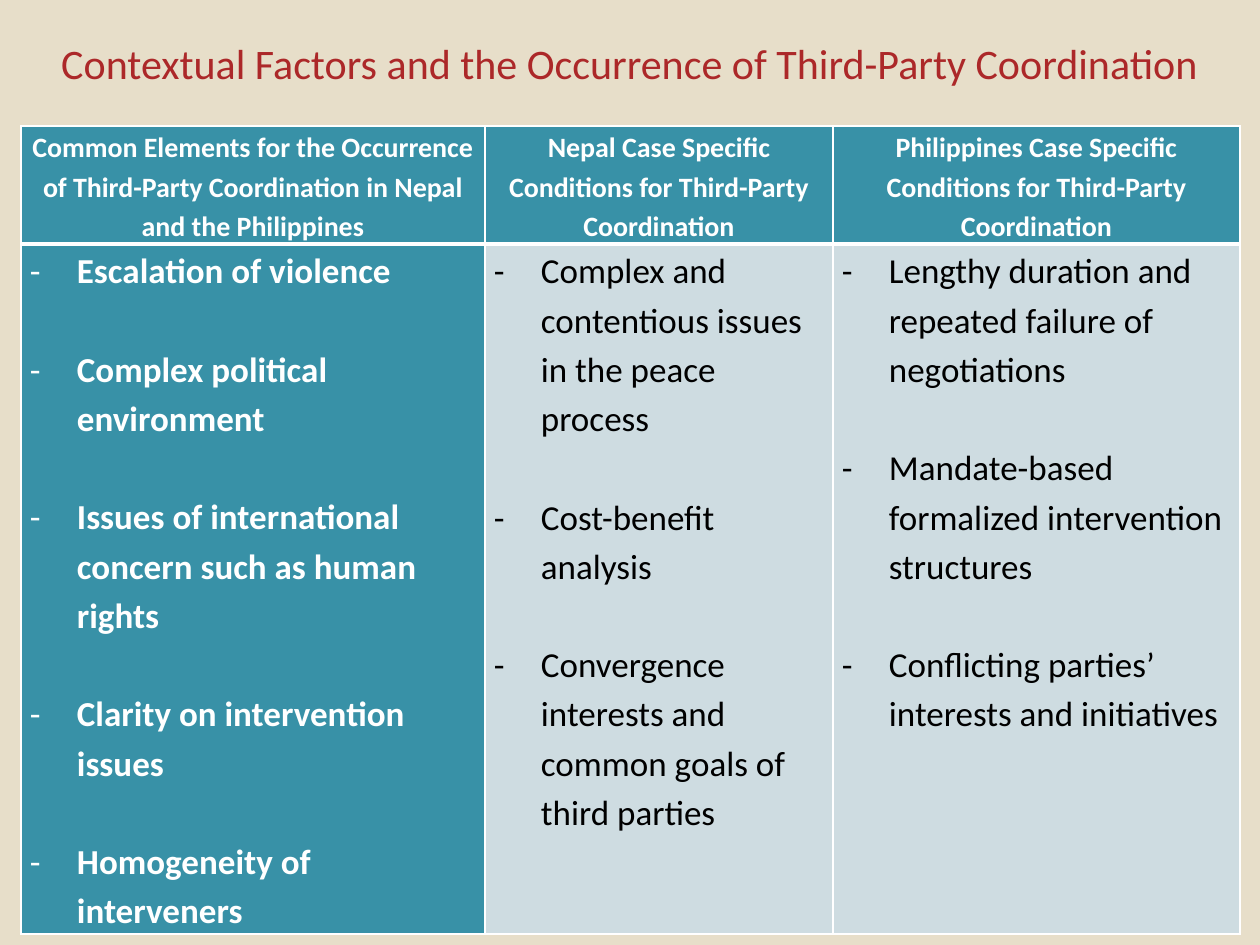
"""Build a slide comparing contextual factors of third-party coordination."""
from lxml.etree import SubElement
from pptx import Presentation
from pptx.dml.color import RGBColor
from pptx.enum.text import MSO_ANCHOR, MSO_AUTO_SIZE, PP_ALIGN
from pptx.oxml import parse_xml
from pptx.oxml.ns import nsdecls, qn
from pptx.util import Emu, Pt

TITLE = "Contextual Factors and the Occurrence of Third-Party Coordination"
COLUMNS = [
    {
        "heading": "Common Elements for the Occurrence of Third-Party Coordination in Nepal and the Philippines",
        "factors": [
            "Escalation of violence",
            "Complex political environment",
            "Issues of international concern such as human rights",
            "Clarity on intervention issues",
            "Homogeneity of interveners",
        ],
        "width": 464, "fill": "3891A7", "color": "FFFFFF", "bold": True,
    },
    {
        "heading": "Nepal Case Specific Conditions for Third-Party Coordination",
        "factors": [
            "Complex and contentious issues in the peace process",
            "Cost-benefit analysis",
            "Convergence interests and common goals of third parties",
        ],
        "width": 348, "fill": "CEDCE1", "color": "000000", "bold": False,
    },
    {
        "heading": "Philippines Case Specific Conditions for Third-Party Coordination",
        "factors": [
            "Lengthy duration and repeated failure of negotiations",
            "Mandate-based formalized intervention structures",
            "Conflicting parties’ interests and initiatives",
        ],
        "width": 407, "fill": "CEDCE1", "color": "000000", "bold": False,
    },
]
HEADING_FILL, WHITE = "3891A7", "FFFFFF"
ROW_HEIGHTS = [118, 690]
FACTOR_GAP = Pt(28.1)
INDENT = 47


def px(length):
    return Emu(round(length * 914400 / 126))


def rgb(color):
    return RGBColor.from_string(color)


def add_text(paragraph, text, size, color, bold=False):
    run = paragraph.add_run()
    run.text = text
    run.font.name = "Calibri"
    run.font.size = Pt(size)
    run.font.bold = bold
    run.font.color.rgb = rgb(color)


def add_dash(paragraph):
    properties = paragraph._p.get_or_add_pPr()
    properties.set("marL", str(px(INDENT)))
    properties.set("indent", str(-px(INDENT)))
    SubElement(properties, qn("a:buFont"), typeface="Calibri")
    SubElement(properties, qn("a:buChar"), char="-")


def format_cell(cell, fill, bottom_width):
    cell.fill.solid()
    cell.fill.fore_color.rgb = rgb(fill)
    cell.margin_left = cell.margin_right = px(9)
    cell.margin_top = cell.margin_bottom = 0
    for position, side in enumerate("LRTB"):
        width = Pt(bottom_width if side == "B" else 1)
        cell._tc.get_or_add_tcPr().insert(position, parse_xml(
            f'<a:ln{side} {nsdecls("a")} w="{width}"><a:solidFill>'
            f'<a:srgbClr val="{WHITE}"/></a:solidFill></a:ln{side}>'))


def add_title(slide):
    title = slide.shapes.title
    title.left, title.top, title.width, title.height = map(px, (10, 21, 1239, 73))
    frame = title.text_frame
    frame.auto_size = MSO_AUTO_SIZE.NONE
    frame.vertical_anchor = MSO_ANCHOR.BOTTOM
    frame.paragraphs[0].alignment = PP_ALIGN.CENTER
    add_text(frame.paragraphs[0], TITLE, 24, "AC2829")


def fill_column(table, index, column):
    table.columns[index].width = px(column["width"])
    heading, body = table.cell(0, index), table.cell(1, index)
    format_cell(heading, HEADING_FILL, 3)
    format_cell(body, column["fill"], 1)

    line = heading.text_frame.paragraphs[0]
    line.alignment = PP_ALIGN.CENTER
    line.line_spacing = 1.15
    add_text(line, column["heading"], 16, WHITE, True)

    for number, factor in enumerate(column["factors"]):
        frame = body.text_frame
        line = frame.add_paragraph() if number else frame.paragraphs[0]
        line.line_spacing = 1.15
        line.space_before = FACTOR_GAP if number else Pt(0)
        add_dash(line)
        add_text(line, factor, 20, column["color"], column["bold"])


def main():
    deck = Presentation()
    deck.slide_width, deck.slide_height = px(1260), px(945)
    slide = deck.slides.add_slide(deck.slide_layouts[5])
    slide.background.fill.solid()
    slide.background.fill.fore_color.rgb = rgb("E7DEC9")
    add_title(slide)

    width = sum(column["width"] for column in COLUMNS)
    table = slide.shapes.add_table(
        len(ROW_HEIGHTS), len(COLUMNS), px(21), px(126), px(width), px(sum(ROW_HEIGHTS))).table
    for row, height in zip(table.rows, ROW_HEIGHTS):
        row.height = px(height)
    for index, column in enumerate(COLUMNS):
        fill_column(table, index, column)
    deck.save("out.pptx")


if __name__ == "__main__":
    main()
